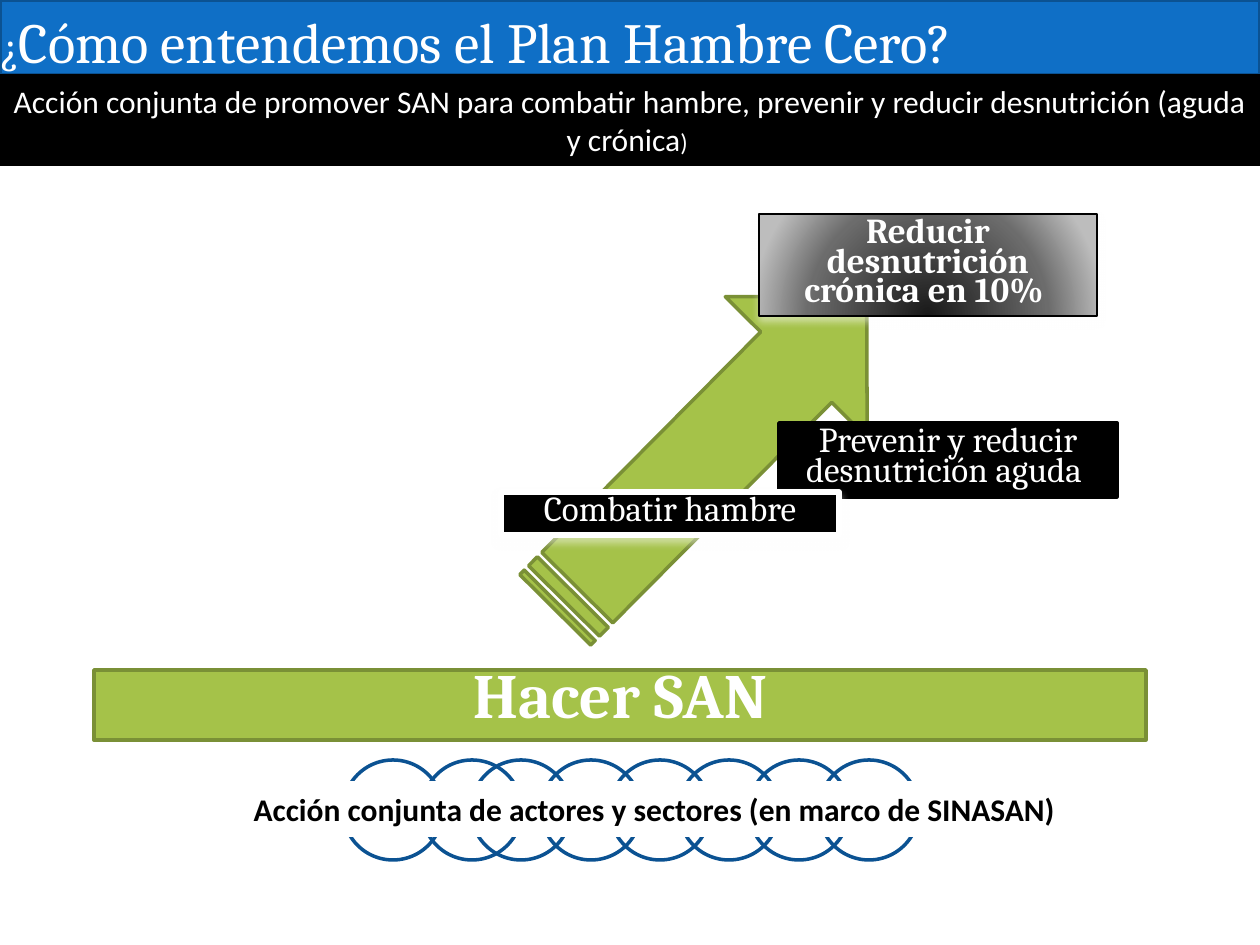
from lxml import etree
from pptx import Presentation
from pptx.dml.color import RGBColor
from pptx.enum.shapes import MSO_SHAPE
from pptx.enum.text import MSO_ANCHOR, MSO_AUTO_SIZE, PP_ALIGN
from pptx.oxml import parse_xml
from pptx.oxml.ns import nsdecls, qn
from pptx.util import Emu, Pt

RECTANGLE = MSO_SHAPE.RECTANGLE
CIRCLE = MSO_SHAPE.FLOWCHART_CONNECTOR
STRIPED_ARROW = MSO_SHAPE.STRIPED_RIGHT_ARROW
TOP, MIDDLE, BOTTOM = MSO_ANCHOR.TOP, MSO_ANCHOR.MIDDLE, MSO_ANCHOR.BOTTOM
LEFT, CENTER = PP_ALIGN.LEFT, PP_ALIGN.CENTER
FIT_SHAPE, NO_FIT = MSO_AUTO_SIZE.SHAPE_TO_FIT_TEXT, MSO_AUTO_SIZE.NONE
EMU_PER_PX = 914400 / 126
HEADING_FONT, BODY_FONT = "Cambria", "Calibri"
BLUE, DARK_BLUE = "0F6FC6", "0B5292"
GREEN, DARK_GREEN = "A5C249", "7A9036"
BLACK, WHITE = "000000", "FFFFFF"
GRAY_STOPS = [(0, "191919"), (68, "6C6C6C"), (100, "BDBDBD")]


def px(value):
    return Emu(round(value * EMU_PER_PX))


def color(value):
    return RGBColor.from_string(value)


class SlideBuilder:
    def __init__(self, presentation):
        self.slide = presentation.slides.add_slide(presentation.slide_layouts[5])

    def paint(self, shape, fill, line, width):
        if fill:
            shape.fill.solid()
            shape.fill.fore_color.rgb = color(fill)
        else:
            shape.fill.background()
        if line:
            shape.line.color.rgb = color(line)
            shape.line.width = Pt(width)
        else:
            shape.line.fill.background()
        shape.shadow.inherit = False

    def shape(self, kind, left, top, width, height, fill=None, line=None, line_width=2):
        shape = self.slide.shapes.add_shape(kind, px(left), px(top), px(width), px(height))
        self.paint(shape, fill, line, line_width)
        return shape

    def set_text(self, shape, runs, font, bold=False, align=CENTER, anchor=TOP,
                 spacing=1.0, text_color=WHITE):
        frame = shape.text_frame
        frame.word_wrap = True
        frame.vertical_anchor = anchor
        paragraph = frame.paragraphs[0]
        paragraph.alignment = align
        paragraph.line_spacing = spacing
        for text, size in runs:
            run = paragraph.add_run()
            run.text = text
            run.font.name = font
            run.font.size = Pt(size)
            run.font.bold = bold
            run.font.color.rgb = color(text_color)
        return frame

    def title(self, left, top, width, height, runs):
        title = self.slide.shapes.title
        title.left, title.top, title.width, title.height = map(px, (left, top, width, height))
        self.paint(title, BLUE, DARK_BLUE, 2)
        frame = self.set_text(title, runs, HEADING_FONT, align=LEFT, anchor=BOTTOM)
        frame.auto_size = NO_FIT
        frame.margin_left = frame.margin_right = frame.margin_bottom = 0
        frame.margin_top = Pt(3.6)

    def label(self, left, top, width, height, text, size, fill, line, line_width=2, bold=False):
        shape = self.shape(RECTANGLE, left, top, width, height, fill, line, line_width)
        frame = self.set_text(shape, [(text, size)], HEADING_FONT, bold, spacing=0.7)
        frame.auto_size = FIT_SHAPE
        return shape

    def band(self, left, top, width, height, runs, fill, line=None, text_color=WHITE, bold=False):
        shape = self.shape(RECTANGLE, left, top, width, height, fill, line, 0.75)
        self.set_text(shape, runs, BODY_FONT, bold, anchor=MIDDLE, text_color=text_color)

    def glow_below(self, shape):
        effects = shape._element.spPr.find(qn("a:effectLst"))
        shadow = etree.SubElement(effects, qn("a:outerShdw"), blurRad=str(Pt(4.5)),
                                  dist=str(Pt(3)), dir="5400000", rotWithShape="0")
        tint = etree.SubElement(shadow, qn("a:srgbClr"), val=WHITE)
        etree.SubElement(tint, qn("a:alpha"), val="48000")

    def radial_fill(self, shape, stops):
        stop_xml = "".join(
            f'<a:gs pos="{position * 1000}"><a:srgbClr val="{value}"/></a:gs>'
            for position, value in stops)
        gradient = parse_xml(
            f'<a:gradFill {nsdecls("a")} rotWithShape="1"><a:gsLst>{stop_xml}</a:gsLst>'
            '<a:path path="circle"><a:fillToRect l="50000" t="130000" r="50000" b="-30000"/>'
            '</a:path></a:gradFill>')
        properties = shape._element.spPr
        properties.replace(properties.find(qn("a:solidFill")), gradient)


def main():
    presentation = Presentation()
    presentation.slide_width, presentation.slide_height = px(1260), px(945)
    builder = SlideBuilder(presentation)

    chain_lefts = [343, 422] + [471 + round(69.5 * index) for index in range(6)]
    for left in chain_lefts:
        builder.shape(CIRCLE, left, 760, 100, 100, line=DARK_BLUE)

    arrow = builder.shape(STRIPED_ARROW, 490, 353, 442, 200, GREEN, DARK_GREEN)
    arrow.rotation = 314.8

    builder.title(0, 0, 1260, 75,
                  [("¿", 25.2), ("Cómo entendemos el Plan Hambre Cero?", 32.4)])

    chronic = builder.label(759, 214, 338, 102, "Reducir desnutrición crónica en 10% ", 20,
                            BLACK, BLACK, 0.75, bold=True)
    builder.radial_fill(chronic, GRAY_STOPS)
    builder.glow_below(chronic)

    builder.label(94, 670, 1052, 70, "Hacer SAN", 36, GREEN, DARK_GREEN, bold=True)
    builder.band(0, 75, 1260, 90,
                 [("Acción conjunta de promover SAN para combatir hambre, prevenir y reducir "
                   "desnutrición (aguda y crónica", 18), (") ", 14)], BLACK, BLACK)
    builder.label(779, 423, 338, 74, "Prevenir y reducir desnutrición aguda ", 20, BLACK, BLACK)
    hunger = builder.label(501, 492, 338, 43, "Combatir hambre", 20, BLACK, WHITE, 3)
    builder.glow_below(hunger)
    builder.band(203, 781, 903, 56,
                 [("Acción conjunta de actores y sectores (en marco de SINASAN)", 18)],
                 WHITE, text_color=BLACK, bold=True)

    presentation.save("out.pptx")


if __name__ == "__main__":
    main()
